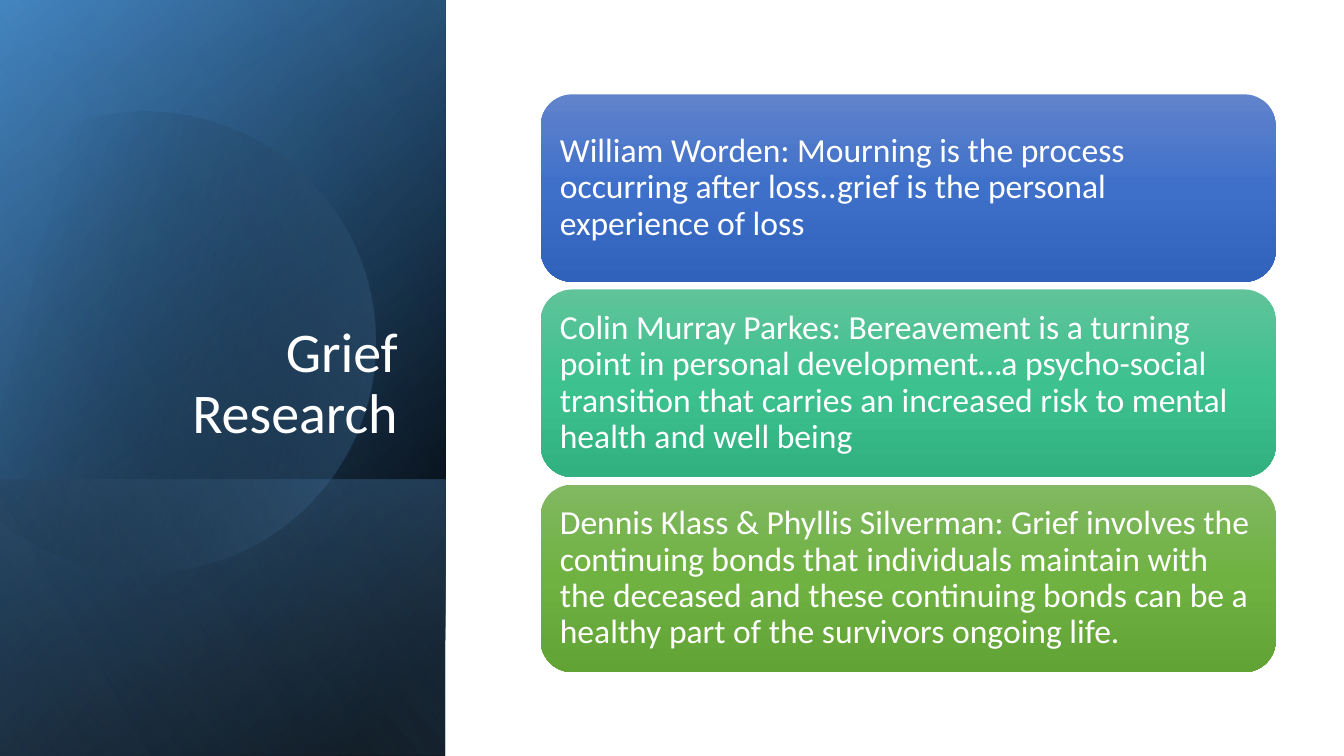
"""Build the Grief Research slide: a dark title panel beside three cards."""
import math
from itertools import pairwise

from lxml import etree
from pptx import Presentation
from pptx.dml.color import RGBColor
from pptx.enum.shapes import MSO_SHAPE
from pptx.enum.text import MSO_ANCHOR, PP_ALIGN
from pptx.oxml.ns import qn
from pptx.util import Pt

RECT, ROUND = MSO_SHAPE.RECTANGLE, MSO_SHAPE.ROUNDED_RECTANGLE
MIDDLE, BOTTOM = MSO_ANCHOR.MIDDLE, MSO_ANCHOR.BOTTOM
LEFT, RIGHT = PP_ALIGN.LEFT, PP_ALIGN.RIGHT

SLIDE_W, SLIDE_H = 960, 540
PANEL_W = 318.24
CARD_X, CARD_Y, CARD_W, CARD_H, CARD_STEP = 386.3, 67.4, 524.9, 133.9, 139.4

BASE_LAYERS = [
    (540, 50, [(8, "000000", 100), (100, "2E75B6", 100)]),
    (540, 30, [(0, "000000", 0), (99, "5B9BD5", 46)]),
    (197.3, 130, [(2, "5B9BD5", 29), (100, "000000", 30)]),
]
DISC_ANGLES = (-118, -90, 0, 90, 150)
DISC_STOPS = [(29, "000000", 0), (100, "5B9BD5", 43)]
TOP_LAYER = (540, 120, [(0, "000000", 0), (99, "9DC3E6", 11)])

CARDS = [
    ("William Worden: Mourning is the process occurring after loss..grief is "
     "the personal experience of loss", ("6183CB", "3E70CA", "3062BB")),
    ("Colin Murray Parkes: Bereavement is a turning point in personal "
     "development…a psycho-social transition that carries an increased risk "
     "to mental health and well being", ("60C39A", "3DC18F", "31B080")),
    ("Dennis Klass & Phyllis Silverman: Grief involves the continuing bonds "
     "that individuals maintain with the deceased and these continuing bonds "
     "can be a healthy part of the survivors ongoing life.",
     ("81B861", "6FB242", "62A336")),
]


def rgb(value):
    """Turn a hex string into a colour."""
    return RGBColor.from_string(value)


def set_gradient(sp, angle, stops):
    """Fill a shape with a linear gradient of (position, colour, opacity)."""
    sp.shadow.inherit = False
    sp.line.fill.background()
    sp.fill.gradient()
    grad = sp._element.spPr.find(qn("a:gradFill"))
    grad.set("rotWithShape", "1")
    grad.find(qn("a:lin")).set("ang", str(round(angle * 60000)))
    gs_list = grad.find(qn("a:gsLst"))
    gs_list.clear()
    for pos, color, opacity in stops:
        gs = etree.SubElement(gs_list, qn("a:gs"), pos=str(pos * 1000))
        clr = etree.SubElement(gs, qn("a:srgbClr"), val=str(rgb(color)))
        if opacity < 100:
            etree.SubElement(clr, qn("a:alpha"), val=str(opacity * 1000))


def set_text(sp, text, size, align, anchor, inset_y):
    """Write one white paragraph into a shape."""
    tf = sp.text_frame
    frame = {"word_wrap": True, "vertical_anchor": anchor,
             "margin_left": Pt(7.2), "margin_right": Pt(7.2),
             "margin_top": Pt(inset_y), "margin_bottom": Pt(inset_y)}
    p = tf.paragraphs[0]
    r = p.add_run()
    r.text = text
    r.font.color.rgb = rgb("FFFFFF")
    for target, values in (
            (tf, frame),
            (p, {"alignment": align, "line_spacing": 0.9}),
            (r.font, {"name": "Calibri", "size": Pt(size)})):
        for key, value in values.items():
            setattr(target, key, value)


def add_layer(slide, height, angle, stops):
    """Add a turned, mirrored panel layer that ends at the slide bottom."""
    middle = SLIDE_H - height / 2
    sp = slide.shapes.add_shape(
        RECT, Pt((PANEL_W - height) / 2), Pt(middle - PANEL_W / 2),
        Pt(height), Pt(PANEL_W))
    sp.rotation = 90
    sp._element.spPr.find(qn("a:xfrm")).set("flipH", "1")
    set_gradient(sp, angle, stops)


def arc_controls(cx, cy, radius, start, end):
    """Return the three cubic points that draw one arc of a circle."""
    a, b = math.radians(start), math.radians(end)
    k = 4 / 3 * math.tan((b - a) / 4)
    unit = [(math.cos(a) - k * math.sin(a), math.sin(a) + k * math.cos(a)),
            (math.cos(b) + k * math.sin(b), math.sin(b) - k * math.cos(b)),
            (math.cos(b), math.sin(b))]
    return [(Pt(cx + radius * x), Pt(cy + radius * y)) for x, y in unit]


def add_disc(slide, cx, cy, radius, rotation, angle, stops):
    """Add a turned disc with a straight cut, its rim made of cubic arcs."""
    arcs = [arc_controls(cx, cy, radius, a, b) for a, b in pairwise(DISC_ANGLES)]
    first = math.radians(DISC_ANGLES[0])
    builder = slide.shapes.build_freeform(
        Pt(cx + radius * math.cos(first)), Pt(cy + radius * math.sin(first)))
    builder.add_line_segments([arc[-1] for arc in arcs], close=True)
    sp = builder.convert_to_shape()
    lines = list(sp._element.spPr.iter(qn("a:lnTo")))
    for line, arc in zip(lines, arcs):
        line.tag = qn("a:cubicBezTo")
        line.clear()
        for x, y in arc:
            etree.SubElement(line, qn("a:pt"),
                             x=str(x - sp.left), y=str(y - sp.top))
    sp.rotation = rotation
    set_gradient(sp, angle, stops)


def add_title(slide, text):
    """Add the slide title at the right of the panel."""
    sp = slide.shapes.add_textbox(Pt(45.7), Pt(132.9), Pt(245.5), Pt(188.6))
    set_text(sp, text, 40, RIGHT, BOTTOM, 3.6)


def add_card(slide, top, text, colors):
    """Add a rounded card with a three-colour gradient."""
    sp = slide.shapes.add_shape(
        ROUND, Pt(CARD_X), Pt(top), Pt(CARD_W), Pt(CARD_H))
    set_gradient(sp, 90, [(i * 50, c, 100) for i, c in enumerate(colors)])
    set_text(sp, text, 24, LEFT, MIDDLE, 7.2)


def main():
    """Build and save the slide."""
    prs = Presentation()
    prs.slide_width, prs.slide_height = Pt(SLIDE_W), Pt(SLIDE_H)
    slide = prs.slides.add_slide(prs.slide_layouts[6])
    for layer in BASE_LAYERS:
        add_layer(slide, *layer)
    add_disc(slide, 103, 241, 164.6, 343.9, 30, DISC_STOPS)
    add_layer(slide, *TOP_LAYER)
    add_title(slide, "Grief Research")
    for i, (text, colors) in enumerate(CARDS):
        add_card(slide, CARD_Y + i * CARD_STEP, text, colors)
    prs.save("out.pptx")


if __name__ == "__main__":
    main()
